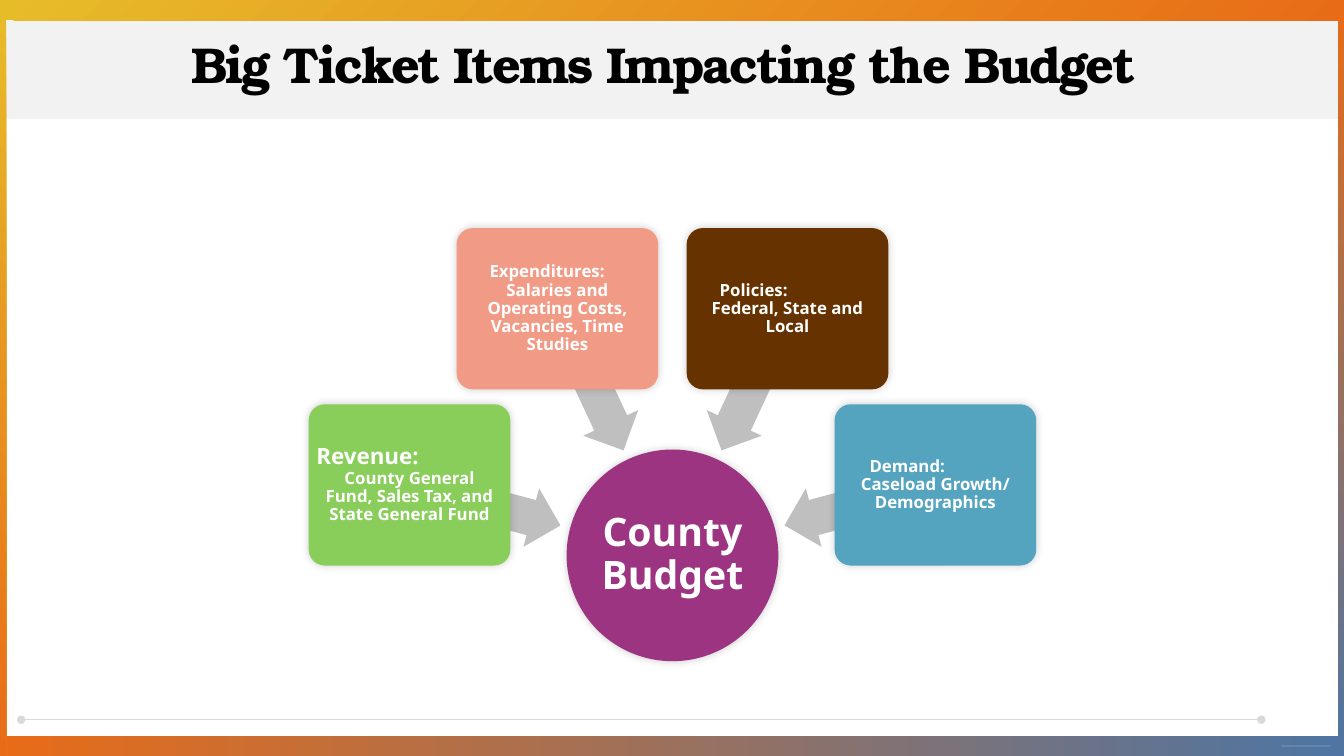
import math
import pptx
import pptx.util
import pptx.dml.color
import pptx.enum.shapes
import pptx.enum.text
import pptx.oxml
import pptx.oxml.ns

Inches, Pt = pptx.util.Inches, pptx.util.Pt
KIND = pptx.enum.shapes.MSO_SHAPE
ALIGN = pptx.enum.text.PP_ALIGN
ANCHOR = pptx.enum.text.MSO_ANCHOR

# Content
TITLE = "Big Ticket Items Impacting the Budget"
HUB = "County Budget"
# angle, fill, heading, heading size, heading indent, body lines
CARDS = [
    (195, "green", "Revenue:", 16, 0,
     ["County General", "Fund, Sales Tax, and State General Fund"]),
    (245, "pink", "Expenditures:", 12, 0.25,
     ["Salaries and Operating Costs, Vacancies, Time Studies"]),
    (295, "brown", "Policies:", 12, 0.25, ["Federal, State and Local"]),
    (345, "blue", "Demand:", 12, 0.27, ["Caseload Growth/ Demographics"]),
]
COLORS = {
    "white": "FFFFFF", "black": "000000", "band": "F2F2F2", "rule": "D9D9D9",
    "gold": "E7BC29", "orange": "E86C17", "steel": "4E75A3", "arrow": "BFBFBF",
    "hub": "9C3481", "green": "89CE5A", "pink": "F19B87", "brown": "663300",
    "blue": "54A4C0",
}
# left, top, width, height, turn, first colour, gradient angle
BARS = [
    (0, 7.3, 13.33, 0.2, 0, "steel", 180),
    (-3.72, 3.72, 7.5, 0.06, 90, "gold", 315),
    (9.55, 3.72, 7.5, 0.06, 90, "steel", 180),
    (0, 0, 13.33, 0.2, 0, "gold", 315),
]
SANS, SERIF = "Noto Sans", "TeX Gyre Bonum"
MID_X, MID_Y = 6.67, 5.51
HUB_D, CARD_W, CARD_H = 2.1, 2, 1.6
ARROW_W, ARROW_H = 1.56, 0.6
ARROW_R, CARD_R = 1.93, 2.7

deck = pptx.Presentation()
deck.slide_width, deck.slide_height = Inches(13.33), Inches(7.5)
slide = deck.slides.add_slide(deck.slide_layouts[6])


def tint(name):
    return pptx.dml.color.RGBColor.from_string(COLORS[name])


def add_xml(parent, tag, body="", **attrs):
    text = " ".join(f'{k}="{v}"' for k, v in attrs.items())
    space = pptx.oxml.ns.nsdecls("a")
    parent.append(pptx.oxml.parse_xml(
        f"<a:{tag} {space} {text}>{body}</a:{tag}>"))


def add_box(kind, left, top, wide, high, fill=None, turn=0):
    box = slide.shapes.add_shape(
        kind, Inches(left), Inches(top), Inches(wide), Inches(high))
    box.shadow.inherit = False
    box.line.fill.background()
    box.rotation = turn
    if fill:
        box.fill.solid()
        box.fill.fore_color.rgb = tint(fill)
    return box


def add_glow(box):
    effects = box._element.spPr.find(pptx.oxml.ns.qn("a:effectLst"))
    add_xml(effects, "outerShdw",
            '<a:srgbClr val="000000"><a:alpha val="20000"/></a:srgbClr>',
            blurRad=Pt(6), dist=0, dir=18900000, rotWithShape=0)


def set_frame(frame, inset, anchor):
    frame.word_wrap = True
    frame.vertical_anchor = anchor
    frame.margin_left = frame.margin_right = Inches(inset)
    frame.margin_top = frame.margin_bottom = Inches(inset)


def add_run(para, text, size, font=SANS, color="white"):
    para.line_spacing = 0.9
    run = para.add_run()
    run.text = text
    run.font.size, run.font.bold, run.font.name = Pt(size), True, font
    run.font.color.rgb = tint(color)
    return run


def add_line(start, end, y, color):
    line = slide.shapes.add_connector(
        pptx.enum.shapes.MSO_CONNECTOR.STRAIGHT,
        Inches(start), Inches(y), Inches(end), Inches(y))
    line.line.width = Pt(0.5)
    line.line.color.rgb = tint(color)
    add_xml(line._element.spPr, "effectLst")
    return line.line._get_or_add_ln()


# Header band and gradient border
add_box(KIND.RECTANGLE, 0, 0, 13.33, 1.18, "band")
for left, top, wide, high, turn, first, angle in BARS:
    bar = add_box(KIND.RECTANGLE, left, top, wide, high, turn=turn)
    bar.fill.gradient()
    bar.fill.gradient_angle = angle
    for stop, name in zip(bar.fill.gradient_stops, (first, "orange")):
        stop.color.rgb = tint(name)

# Footer lines
rule = add_line(12.51, 0.21, 7.14, "rule")
for tag in ("headEnd", "tailEnd"):
    add_xml(rule, tag, type="oval")
dash = add_line(13.2, 12.71, 7.4, "white")
add_xml(dash.find(".//" + pptx.oxml.ns.qn("a:srgbClr")), "alpha", val=34000)

# Title
box = slide.shapes.add_textbox(
    Inches(1.9), Inches(0.4), Inches(9.54), Inches(1.25))
set_frame(box.text_frame, 0, ANCHOR.TOP)
run = add_run(box.text_frame.paragraphs[0], TITLE, 36, SERIF, "black")
run.font._element.set("spc", "-150")

# Hub
hub = add_box(KIND.OVAL, MID_X - HUB_D / 2, MID_Y - HUB_D / 2,
              HUB_D, HUB_D, "hub")
add_glow(hub)
set_frame(hub.text_frame, 0.02, ANCHOR.MIDDLE)
para = hub.text_frame.paragraphs[0]
para.alignment = ALIGN.CENTER
add_run(para, HUB, 28)

# Arrows and cards set around the hub
for angle, fill, head, size, indent, body in CARDS:
    dx, dy = math.cos(math.radians(angle)), math.sin(math.radians(angle))
    arrow = add_box(KIND.LEFT_ARROW, MID_X + ARROW_R * dx - ARROW_W / 2,
                    MID_Y + ARROW_R * dy - ARROW_H / 2,
                    ARROW_W, ARROW_H, "arrow", angle)
    arrow.adjustments[0], arrow.adjustments[1] = 0.6, 0.5

    card = add_box(KIND.ROUNDED_RECTANGLE, MID_X + CARD_R * dx - CARD_W / 2,
                   MID_Y + CARD_R * dy - CARD_H / 2, CARD_W, CARD_H, fill)
    card.adjustments[0] = 0.1
    add_glow(card)
    set_frame(card.text_frame, 0.03, ANCHOR.MIDDLE)
    para = card.text_frame.paragraphs[0]
    para.alignment = ALIGN.LEFT
    para._p.get_or_add_pPr().set("marL", str(Inches(indent)))
    add_run(para, head, size)
    for text in body:
        para = card.text_frame.add_paragraph()
        para.alignment = ALIGN.CENTER
        add_run(para, text, 12)

deck.save("out.pptx")
